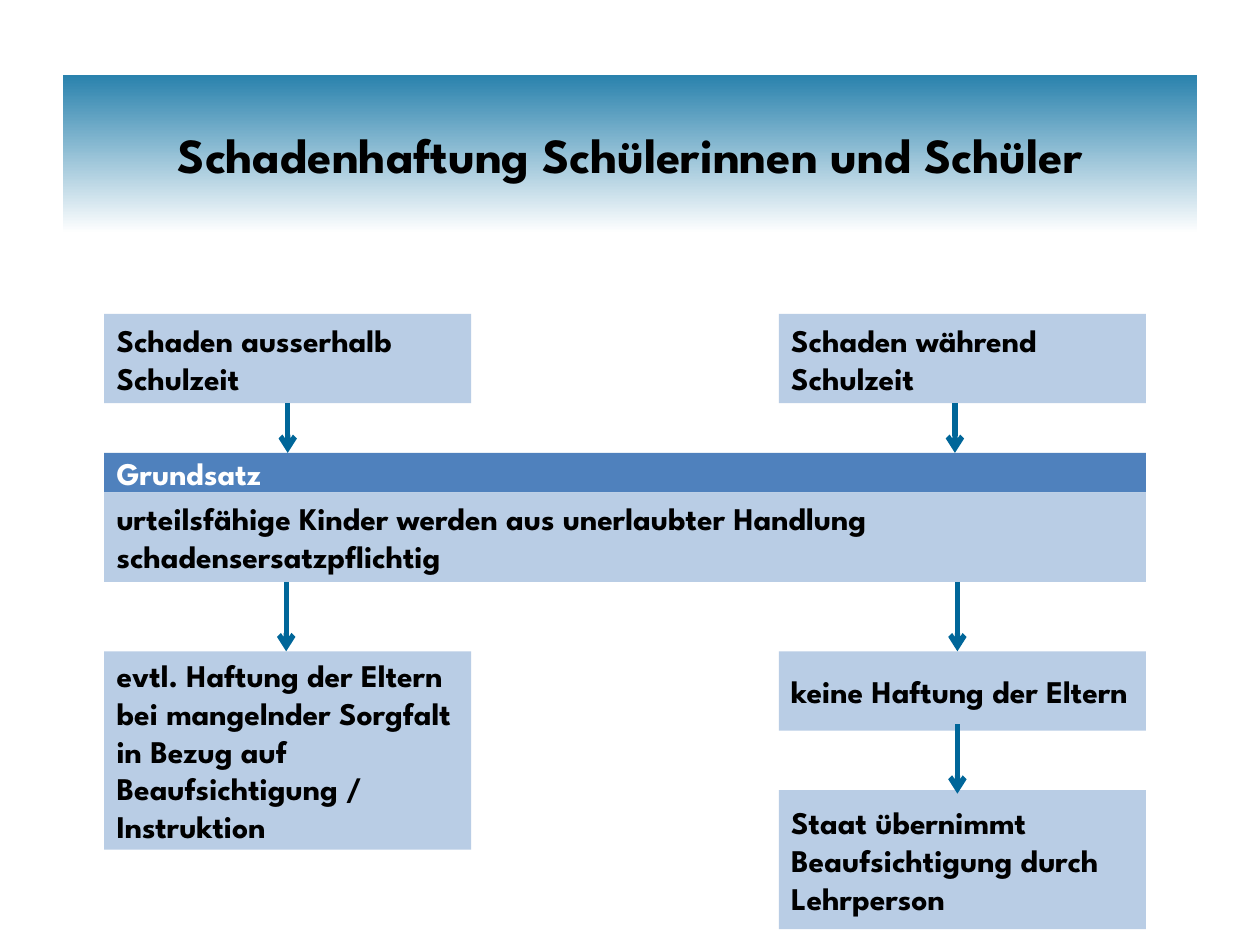
from dataclasses import dataclass

from lxml.etree import SubElement
from pptx import Presentation
from pptx.dml.color import RGBColor as Rgb
from pptx.enum.shapes import MSO_CONNECTOR as Link, MSO_SHAPE as Form
from pptx.enum.text import MSO_ANCHOR as Anchor, PP_ALIGN as Align
from pptx.oxml.ns import qn
from pptx.util import Cm, Pt


@dataclass(frozen=True)
class Theme:
    face: str = "League Spartan"
    head: int = 28
    body: int = 18
    line: int = 3
    dark: str = "000000"
    white: str = "FFFFFF"
    pale: str = "B9CDE5"
    blue: str = "4F81BD"
    arrow: str = "006699"
    band: str = "2A82AD"


THEME = Theme()

# Columns and widths in cm
LEFT, RIGHT = 2.1, 15.7
SLIM, WIDE = 7.4, 21.0


def color(code):
    return Rgb.from_string(code)


def write(shape, text, size, ink, align):
    frame = shape.text_frame
    frame.word_wrap = True
    frame.vertical_anchor = Anchor.MIDDLE
    para = frame.paragraphs[0]
    para.text = text
    para.alignment = align
    font = para.font
    font.name, font.size, font.bold = THEME.face, Pt(size), True
    font.color.rgb = color(ink)


def add_title(slide, text):
    box = slide.shapes.add_textbox(Cm(1.27), Cm(1.52), Cm(22.86), Cm(3.18))
    box.fill.gradient()
    box.fill.gradient_angle = 270
    for stop, code in zip(box.fill.gradient_stops, (THEME.band, THEME.white)):
        stop.color.rgb = color(code)
    write(box, text, THEME.head, THEME.dark, Align.CENTER)


def add_box(slide, text, x, y, w, h, fill=THEME.pale, ink=THEME.dark):
    box = slide.shapes.add_shape(Form.RECTANGLE, Cm(x), Cm(y), Cm(w), Cm(h))
    box.shadow.inherit = False
    box.fill.solid()
    box.fill.fore_color.rgb = color(fill)
    box.line.fill.background()
    write(box, text, THEME.body, ink, Align.LEFT)


def add_arrow(slide, x, top, end):
    link = slide.shapes.add_connector(Link.STRAIGHT, Cm(x), Cm(top), Cm(x), Cm(end))
    link.line.color.rgb = color(THEME.arrow)
    link.line.width = Pt(THEME.line)
    props = link.line._get_or_add_ln()
    SubElement(props, qn("a:tailEnd"), type="arrow")
    SubElement(link._element.spPr, qn("a:effectLst"))


def main():
    deck = Presentation()
    deck.slide_width, deck.slide_height = Cm(25.4), Cm(19.05)
    slide = deck.slides.add_slide(deck.slide_layouts[6])

    add_title(slide, "Schadenhaftung Schülerinnen und Schüler")

    # Two cases
    add_box(slide, "Schaden ausserhalb Schulzeit", LEFT, 6.33, SLIM, 1.8)
    add_box(slide, "Schaden während Schulzeit", RIGHT, 6.33, SLIM, 1.8)

    # Shared principle
    add_box(slide, "Grundsatz", LEFT, 9.13, WIDE, 0.8, THEME.blue, THEME.white)
    add_box(slide, "urteilsfähige Kinder werden aus unerlaubter Handlung "
            "schadensersatzpflichtig", LEFT, 9.93, WIDE, 1.8)

    # Outcomes
    add_box(slide, "evtl. Haftung der Eltern bei mangelnder Sorgfalt in Bezug auf "
            "Beaufsichtigung / Instruktion", LEFT, 13.13, SLIM, 4)
    add_box(slide, "keine Haftung der Eltern", RIGHT, 13.13, SLIM, 1.6)
    add_box(slide, "Staat übernimmt Beaufsichtigung durch Lehrperson",
            RIGHT, 15.93, SLIM, 2.8)

    # Arrows: x, start, end
    for x, top, end in (
        (5.8, 8.13, 9.13),
        (19.25, 8.13, 9.13),
        (5.77, 11.73, 13.13),
        (19.3, 11.73, 13.13),
        (19.3, 14.6, 16),
    ):
        add_arrow(slide, x, top, end)

    deck.save("out.pptx")


if __name__ == "__main__":
    main()
